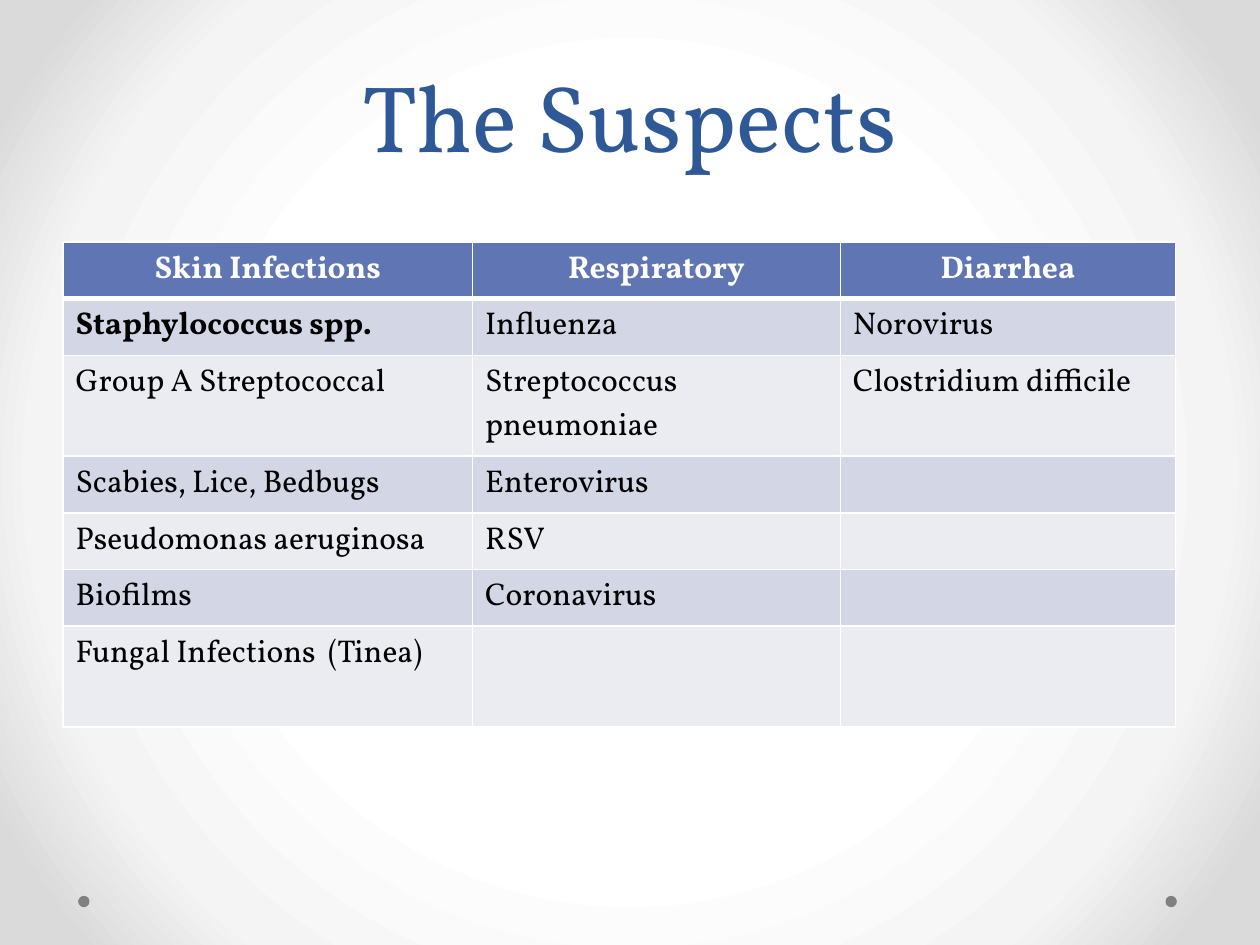
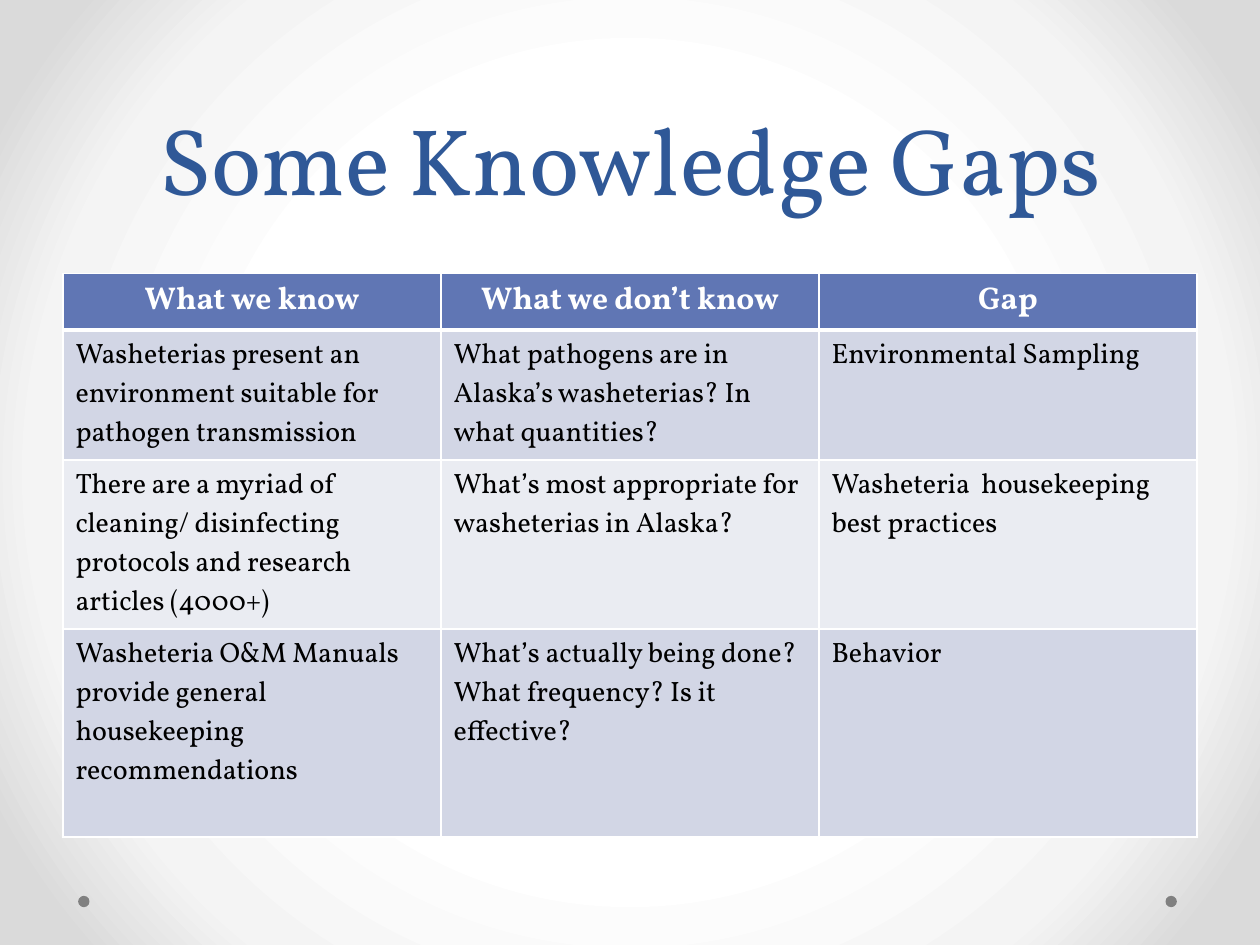
from lxml import etree
from pptx import Presentation
from pptx.dml.color import RGBColor
from pptx.enum.shapes import MSO_SHAPE
from pptx.enum.text import MSO_ANCHOR, MSO_AUTO_SIZE, PP_ALIGN
from pptx.oxml import parse_xml
from pptx.oxml.ns import nsdecls, qn
from pptx.util import Inches, Pt

OVAL = MSO_SHAPE.OVAL
BOTTOM = MSO_ANCHOR.BOTTOM
NO_AUTOFIT = MSO_AUTO_SIZE.NONE
CENTER, LEFT = PP_ALIGN.CENTER, PP_ALIGN.LEFT

FONT = "Vollkorn"
TITLE_BLUE = RGBColor(0x2F, 0x58, 0x97)
HEADER_BLUE = RGBColor(0x60, 0x76, 0xB4)
BAND_DARK = RGBColor(0xD2, 0xD6, 0xE5)
BAND_LIGHT = RGBColor(0xEA, 0xEC, 0xF2)
WHITE = RGBColor(0xFF, 0xFF, 0xFF)
BLACK = RGBColor(0x00, 0x00, 0x00)
DOT_GRAY = RGBColor(0x80, 0x80, 0x80)
GLOW_STOPS = [(50, WHITE), (76, RGBColor(0xF4, 0xF4, 0xF4)), (92, RGBColor(0xDA, 0xDA, 0xDA))]

# Content: positions in inches, body text size in points
TOPICS = [
    {
        "title": "The Suspects", "title_top": 0.58, "title_height": 0.83,
        "table_top": 1.92, "body_size": 18,
        "columns": [3.25, 2.92, 2.66],
        "heights": [0.45, 0.45, 0.8, 0.45, 0.45, 0.45, 0.8],
        "rows": [
            ["Skin Infections", "Respiratory", "Diarrhea"],
            ["Staphylococcus spp.", "Influenza", "Norovirus"],
            ["Group A Streptococcal", "Streptococcus pneumoniae", "Clostridium difficile"],
            ["Scabies, Lice, Bedbugs", "Enterovirus", ""],
            ["Pseudomonas aeruginosa", "RSV", ""],
            ["Biofilms", "Coronavirus", ""],
            ["Fungal Infections  (Tinea)", "", ""],
        ],
        "emphasis": "Staphylococcus spp.",
    },
    {
        "title": "Some Knowledge Gaps", "title_top": 0, "title_height": 1.75,
        "table_top": 2.17, "body_size": 16,
        "columns": [3, 3, 3],
        "heights": [0.45, 1.03, 1.34, 1.65],
        "rows": [
            ["What we know", "What we don’t know", "Gap"],
            ["Washeterias present an environment suitable for pathogen transmission",
             "What pathogens are in Alaska’s washeterias? In what quantities?",
             "Environmental Sampling"],
            ["There are a myriad of cleaning/ disinfecting protocols and research articles (4000+)",
             "What’s most appropriate for washeterias in Alaska?",
             "Washeteria  housekeeping best practices"],
            ["Washeteria O&M Manuals provide general housekeeping recommendations",
             "What’s actually being done? What frequency? Is it effective?",
             "Behavior"],
        ],
        "emphasis": None,
    },
]


def style_text(paragraph, size, color, align, bold=False):
    paragraph.alignment = align
    for run in paragraph.runs:
        run.font.name = FONT
        run.font.size = Pt(size)
        run.font.bold = bold
        run.font.color.rgb = color


def add_borders(cell, bottom_width):
    properties = cell._tc.get_or_add_tcPr()
    for side, width in (("L", 1), ("R", 1), ("T", 1), ("B", bottom_width)):
        line = etree.SubElement(properties, qn(f"a:ln{side}"), w=str(Pt(width)))
        fill = etree.SubElement(line, qn("a:solidFill"))
        etree.SubElement(fill, qn("a:srgbClr"), val=str(WHITE))


prs = Presentation()
prs.slide_width, prs.slide_height = Inches(10), Inches(7.5)

# Shared background: a soft radial glow on the master
master = prs.slide_master
master.background.fill.solid()
stops = "".join(
    f'<a:gs pos="{position * 1000}"><a:srgbClr val="{color}"/></a:gs>'
    for position, color in GLOW_STOPS
)
glow = parse_xml(
    f'<a:gradFill {nsdecls("a")} rotWithShape="1"><a:gsLst>{stops}</a:gsLst>'
    '<a:path path="circle"><a:fillToRect l="50000" t="50000" r="50000" b="50000"/></a:path>'
    "</a:gradFill>"
)
background = master.element.find(".//" + qn("p:bgPr"))
background.replace(background.find(qn("a:solidFill")), glow)

for topic in TOPICS:
    slide = prs.slides.add_slide(prs.slide_layouts[5])

    # Corner dots
    for dot_left in (9.25, 0.62):
        dot = slide.shapes.add_shape(OVAL, Inches(dot_left), Inches(7.11), Inches(0.09), Inches(0.09))
        dot.shadow.inherit = False
        dot.fill.solid()
        dot.fill.fore_color.rgb = DOT_GRAY
        dot.line.fill.background()

    # Title
    title = slide.shapes.title
    title.left, title.top = Inches(0.5), Inches(topic["title_top"])
    title.width, title.height = Inches(9), Inches(topic["title_height"])
    heading = title.text_frame
    heading.text = topic["title"]
    heading.auto_size = NO_AUTOFIT
    heading.vertical_anchor = BOTTOM
    heading.paragraphs[0].line_spacing = Pt(58)
    style_text(heading.paragraphs[0], 54, TITLE_BLUE, CENTER)

    # Table
    rows, columns, heights = topic["rows"], topic["columns"], topic["heights"]
    table = slide.shapes.add_table(
        len(rows), len(columns), Inches(0.5), Inches(topic["table_top"]),
        Inches(sum(columns)), Inches(sum(heights)),
    ).table
    for column, width in zip(table.columns, columns):
        column.width = Inches(width)
    for row, height in zip(table.rows, heights):
        row.height = Inches(height)

    for r, texts in enumerate(rows):
        is_header = r == 0
        band = HEADER_BLUE if is_header else BAND_DARK if r % 2 else BAND_LIGHT
        for c, text in enumerate(texts):
            cell = table.cell(r, c)
            add_borders(cell, 3 if is_header else 1)
            cell.fill.solid()
            cell.fill.fore_color.rgb = band
            if not text:
                continue
            cell.text_frame.text = text
            entry = cell.text_frame.paragraphs[0]
            if is_header:
                style_text(entry, 18, WHITE, CENTER, bold=True)
            else:
                style_text(entry, topic["body_size"], BLACK, LEFT, bold=text == topic["emphasis"])

prs.save("out.pptx")
